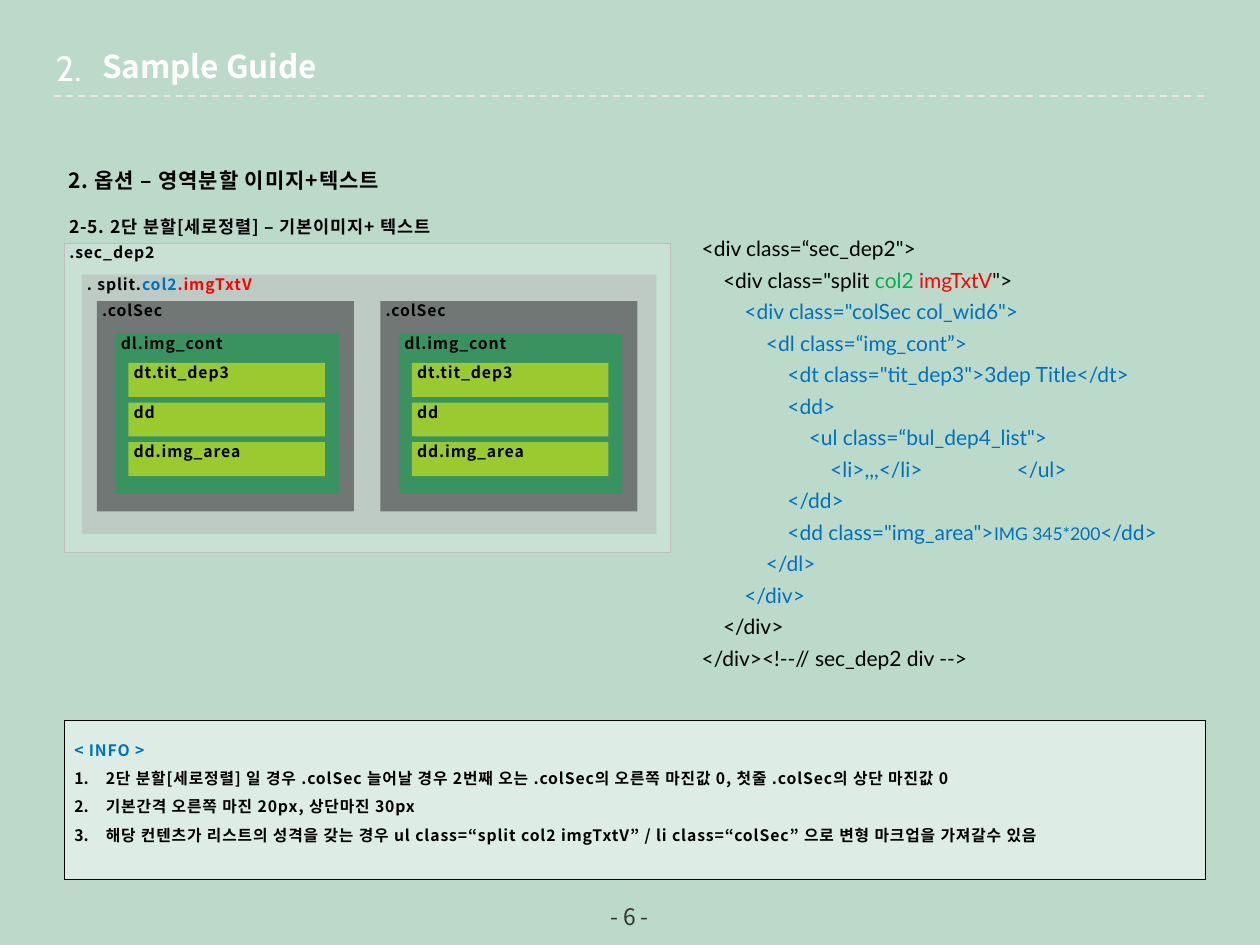
from typing import NamedTuple

from lxml import etree
from pptx import Presentation
from pptx.dml.color import RGBColor
from pptx.enum.dml import MSO_LINE
from pptx.enum.shapes import MSO_CONNECTOR, MSO_SHAPE
from pptx.enum.text import MSO_ANCHOR, MSO_AUTO_SIZE, PP_ALIGN
from pptx.oxml.ns import qn
from pptx.util import Inches, Pt

RECT, STRAIGHT, DASH = MSO_SHAPE.RECTANGLE, MSO_CONNECTOR.STRAIGHT, MSO_LINE.DASH
TOP, MIDDLE = MSO_ANCHOR.TOP, MSO_ANCHOR.MIDDLE
LEFT, CENTER = PP_ALIGN.LEFT, PP_ALIGN.CENTER
NO_FIT = MSO_AUTO_SIZE.NONE

SANS, CODE, NUMERAL = "Noto Sans CJK KR", "Lato", "Cabin"
COLORS = {
    "bg": "BBDACA", "rule": "ECE9DA", "page": "333333", "white": "FFFFFF",
    "black": "000000", "blue": "0070C0", "red": "FF0000", "green": "00B050",
    "border": "BFBFBF", "split": "B5B5B5", "section": "262626", "item": "FFFF00",
}
COLS, ROWS = 100, 75


class Box(NamedTuple):
    x: float
    y: float
    w: float
    h: float

    def moved(self, dx: float = 0, dy: float = 0) -> "Box":
        return self._replace(x=self.x + dx, y=self.y + dy)


class Run(NamedTuple):
    text: str
    color: str = "black"
    size: float | None = None


class CodeLine(NamedTuple):
    depth: int
    runs: list[Run]


class Panel(NamedTuple):
    box: Box
    label: list[Run]
    fill: str
    alpha: int = 50
    line: str | None = None


prs = Presentation()
prs.slide_width, prs.slide_height = Inches(10), Inches(7.5)
s = prs.slides.add_slide(prs.slide_layouts[5])
s.background.fill.solid()
s.background.fill.fore_color.rgb = RGBColor.from_string(COLORS["bg"])


def grid(*cells: float) -> list[int]:
    units = (prs.slide_width / COLS, prs.slide_height / ROWS)
    return [round(c * units[i % 2]) for i, c in enumerate(cells)]


def write(tf, paragraphs: list[list[Run]], *, size=9, font=SANS, bold=False, spc=0.0,
          align=LEFT, anchor=TOP, spacing=None, inset=(0.04, 0, 0, 0), wrap=True,
          numbered_from=None) -> None:
    tf.auto_size, tf.word_wrap, tf.vertical_anchor = NO_FIT, wrap, anchor
    tf.margin_left, tf.margin_top, tf.margin_right, tf.margin_bottom = map(Inches, inset)
    for i, runs in enumerate(paragraphs):
        p = tf.paragraphs[0] if i == 0 else tf.add_paragraph()
        p.alignment = align
        if spacing:
            p.line_spacing = spacing
        if numbered_from is not None and i >= numbered_from:
            pPr = p._p.get_or_add_pPr()
            pPr.set("marL", str(Inches(0.25)))
            pPr.set("indent", str(Inches(-0.25)))
            etree.SubElement(pPr, qn("a:buFont"), typeface="+mj-lt")
            etree.SubElement(pPr, qn("a:buAutoNum"), type="arabicPeriod")
        for run in runs:
            r = p.add_run()
            r.text = run.text
            r.font.size, r.font.bold, r.font.name = Pt(run.size or size), bold, font
            r.font.color.rgb = RGBColor.from_string(COLORS[run.color])
            rPr = r._r.get_or_add_rPr()
            etree.SubElement(rPr, qn("a:ea"), typeface=font)
            if spc:
                rPr.set("spc", str(round(spc * 100)))


def add_text(box: Box, paragraphs: list[list[Run]], **fmt) -> None:
    write(s.shapes.add_textbox(*grid(*box)).text_frame, paragraphs, **fmt)


def add_panel(panel: Panel, width: float = 0.25):
    sp = s.shapes.add_shape(RECT, *grid(*panel.box))
    sp.shadow.inherit = False
    sp.fill.solid()
    sp.fill.fore_color.rgb = RGBColor.from_string(COLORS[panel.fill])
    color = sp._element.spPr.find(qn("a:solidFill"))[0]
    etree.SubElement(color, qn("a:alpha"), val=str(panel.alpha * 1000))
    if panel.line:
        sp.line.color.rgb = RGBColor.from_string(COLORS[panel.line])
        sp.line.width = Pt(width)
    else:
        sp.line.fill.background()
    return sp


def add_labelled(panel: Panel) -> None:
    write(add_panel(panel).text_frame, [panel.label], bold=True, spc=0.5)


def add_rule(x1: float, x2: float, y: float) -> None:
    rule = s.shapes.add_connector(STRAIGHT, *grid(x1, y, x2, y))
    rule.line.color.rgb = RGBColor.from_string(COLORS["rule"])
    rule.line.width, rule.line.dash_style = Pt(1), DASH
    etree.SubElement(rule._element.spPr, qn("a:effectLst"))


def add_section(dx: float) -> None:
    add_labelled(Panel(Box(7.7, 23.9, 20.4, 16.7).moved(dx), [Run(".colSec")], "section"))
    add_labelled(Panel(Box(9.2, 26.5, 17.7, 12.7).moved(dx), [Run("dl.img_cont")], "green"))
    for i, label in enumerate(("dt.tit_dep3", "dd", "dd.img_area")):
        box = Box(10.2, 28.8, 15.6, 2.7).moved(dx, i * 3.15)
        add_labelled(Panel(box, [Run(label)], "item"))


def blue(depth: int, text: str) -> CodeLine:
    return CodeLine(depth, [Run(text, "blue")])


CODE_LINES = [
    CodeLine(0, [Run('<div class=“sec_dep2">')]),
    CodeLine(1, [Run('<div class="split '), Run("col2 ", "green"),
                 Run("imgTxtV", "red"), Run('">')]),
    blue(2, '<div class="colSec col_wid6">'),
    blue(3, "<dl class=“img_cont”>"),
    blue(4, '<dt class="tit_dep3">3dep Title</dt>'),
    blue(4, "<dd>"),
    blue(5, '<ul class=“bul_dep4_list">'),
    blue(6, "<li>,,,</li>\t\t</ul>"),
    blue(4, "</dd>"),
    CodeLine(4, [Run('<dd class="img_area">', "blue"), Run("IMG 345*200", "blue", 10),
                 Run("</dd>", "blue")]),
    blue(3, "</dl>"),
    blue(2, "</div>"),
    CodeLine(1, [Run("</div>")]),
    CodeLine(0, [Run("</div><!--// sec_dep2 div -->")]),
]
INFO = [
    [Run("< INFO >", "blue")],
    [Run("2단 분할[세로정렬] 일 경우 .colSec 늘어날 경우 2번째 오는 .colSec의 오른쪽 마진값 0, "
         "첫줄 .colSec의 상단 마진값 0")],
    [Run("기본간격 오른쪽 마진 20px, 상단마진 30px")],
    [Run("해당 컨텐츠가 리스트의 성격을 갖는 경우 ul class=“split col2 imgTxtV” / "
         "li class=“colSec” 으로 변형 마크업을 가져갈수 있음")],
]
DEFAULT_INSET = (0.1, 0.05, 0.1, 0.05)

title = s.shapes.title
title.left, title.top, title.width, title.height = grid(7.1, 3.2, 46.1, 4)
write(title.text_frame, [[Run("Sample Guide", "white")]], size=18, bold=True,
      inset=DEFAULT_INSET)
add_text(Box(2.7, 3.2, 5.5, 4.4), [[Run("2.", "white")]], size=20, font=NUMERAL,
         align=CENTER, inset=DEFAULT_INSET)
add_rule(4.3, 95.7, 7.6)

add_text(Box(5, 12.3, 27.9, 3), [[Run("2. 옵션 – 영역분할 이미지+텍스트")]], size=12,
         bold=True, spc=0.5, spacing=1.5, wrap=False)
add_text(Box(5.1, 16.3, 32, 2.5), [[Run("2-5. 2단 분할[세로정렬] – 기본이미지+ 텍스트")]],
         size=10, bold=True, spc=0.5, spacing=1.5, wrap=False)

add_labelled(Panel(Box(5.1, 19.3, 48.1, 24.5), [Run(".sec_dep2")], "white", 20, "border"))
add_labelled(Panel(Box(6.5, 21.8, 45.6, 20.6),
                   [Run(". split."), Run("col2", "blue"), Run(".imgTxtV", "red")], "split"))
for column in range(2):
    add_section(column * 22.5)

add_text(Box(54.7, 17.7, 42.5, 38.9),
         [[Run("    " * line.depth + line.runs[0].text, *line.runs[0][1:]), *line.runs[1:]]
          for line in CODE_LINES],
         size=12, font=CODE, spacing=Pt(18), inset=DEFAULT_INSET)

info = add_panel(Panel(Box(5.1, 57.2, 90.6, 12.6), [], "white", line="black"), 0.75)
write(info.text_frame, INFO, bold=True, spc=0.5, spacing=1.5,
      inset=(0.08, 0.08, 0.08, 0), numbered_from=1)
add_text(Box(38.3, 71.2, 23.3, 3.1), [[Run("- 6 -", "page")]], size=13, align=CENTER,
         anchor=MIDDLE, inset=(0, 0, 0, 0))

prs.save("out.pptx")
